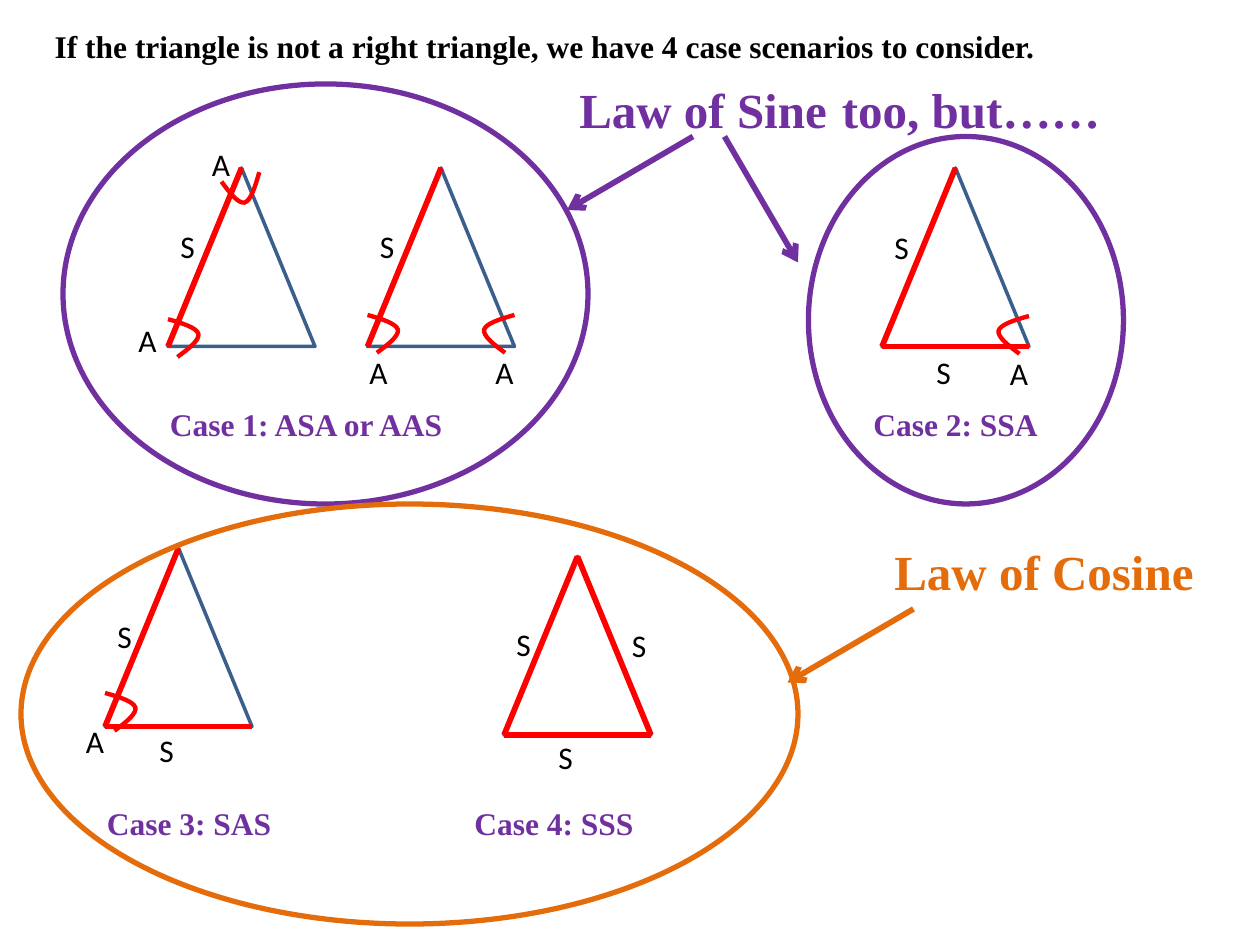
"""Build the slide that sorts non-right triangles into the laws of sine and cosine."""
from lxml.etree import SubElement
from pptx import Presentation
from pptx.dml.color import RGBColor
from pptx.enum.shapes import MSO_CONNECTOR as Connector, MSO_SHAPE as Shape
from pptx.enum.text import MSO_ANCHOR as Anchor, PP_ALIGN as Align
from pptx.oxml.ns import qn
from pptx.util import Inches, Pt

COLORS = {"black": "000000", "side": "3A5F8C", "known": "FF0000",
          "sine": "7030A0", "cosine": "E46C0A"}
FRAME = {"word_wrap": True, "vertical_anchor": Anchor.TOP}
LETTER = {"name": "Calibri", "size": Pt(18), "bold": False}
CAPTION = {"name": "Times New Roman", "size": Pt(18), "bold": True}
LAW = CAPTION | {"size": Pt(28)}

deck = Presentation()
deck.slide_width, deck.slide_height = Inches(10), Inches(7.5)
CELL = deck.slide_width / 120
slide = deck.slides.add_slide(deck.slide_layouts[5])
shapes = slide.shapes


def write(box, place, text, font, color):
    box.left, box.top, box.width, box.height = (round(n * CELL) for n in place)
    frame = box.text_frame
    for key, value in FRAME.items():
        setattr(frame, key, value)
    paragraph = frame.paragraphs[0]
    paragraph.alignment = Align.LEFT
    run = paragraph.add_run()
    run.text = text
    for key, value in font.items():
        setattr(run.font, key, value)
    run.font.color.rgb = RGBColor.from_string(COLORS[color])


def outline(item, color, points, arrow=False):
    if hasattr(item, "fill"):
        item.fill.background()
    item.line.color.rgb = RGBColor.from_string(COLORS[color])
    item.line.width = Pt(points)
    properties = item._element.spPr
    if arrow:
        SubElement(properties.find(qn("a:ln")), qn("a:tailEnd"), type="arrow")
    SubElement(properties, qn("a:effectLst"))


write(shapes.title, (4, 2, 114, 4.8),
      "If the triangle is not a right triangle, we have 4 case scenarios to consider.",
      CAPTION, "black")

BASE, HEIGHT = 14, 17
CORNERS = {"left": (0, HEIGHT), "top": (BASE / 2, 0), "right": (BASE, HEIGHT)}
triangles = [
    (16, 16, ["left top"]),
    (35, 16, ["left top"]),
    (84, 16, ["left top", "left right"]),
    (10, 52.2, ["left top", "left right"]),
    (48, 53, ["left top", "left right", "top right"]),
]
for column, row, known_sides in triangles:
    triangle = shapes.add_shape(Shape.ISOSCELES_TRIANGLE, *(
        round(n * CELL) for n in (column, row, BASE, HEIGHT)))
    outline(triangle, "side", 2)
    for side in known_sides:
        ends = [round(n * CELL) for corner in side.split()
                for n in (column + CORNERS[corner][0], row + CORNERS[corner][1])]
        outline(shapes.add_connector(Connector.STRAIGHT, *ends), "known", 3.25)

ARC = [(0, 0), (1.4, 0.4), (2.7, 0.8), (2.9, 1.4), (3, 2), (2, 2.8), (0.9, 3.6)]
TURNS = {
    "left": lambda u, v: (u, v),
    "right": lambda u, v: (-u, v),
    "top": lambda u, v: (-v, u),
}
angles = [
    (24.7, 16.4, "top"), (16, 30.4, "left"), (35, 30, "left"),
    (49, 30, "right"), (98, 30.1, "right"), (10, 66, "left"),
]
for column, row, corner in angles:
    turned = [TURNS[corner](u, v) for u, v in ARC]
    start, *controls = [(round((column + x) * CELL), round((row + y) * CELL))
                        for x, y in turned]
    builder = shapes.build_freeform(*start)
    builder.add_line_segments(controls, close=False)
    angle = builder.convert_to_shape()
    segments = list(angle._element.iter(qn("a:lnTo")))
    curve_path = segments[0].getparent()
    for first in range(0, len(segments), 3):
        curve = SubElement(curve_path, qn("a:cubicBezTo"))
        for segment in segments[first:first + 3]:
            curve.append(segment[0])
            curve_path.remove(segment)
    outline(angle, "known", 2.5)

groups = [(6, 8, 50, 40, "sine"), (77, 13, 30, 35, "sine"), (2, 48, 74, 40, "cosine")]
for *place, law in groups:
    outline(shapes.add_shape(Shape.OVAL, *(round(n * CELL) for n in place)), law, 3)

arrows = [(66, 13, 54, 20, "sine"), (69, 13, 76, 25, "sine"), (87, 58, 75, 65, "cosine")]
for *ends, law in arrows:
    pointer = shapes.add_connector(Connector.STRAIGHT, *(round(n * CELL) for n in ends))
    outline(pointer, law, 3.25, arrow=True)

letters = {
    "S": [(16, 21), (35, 21), (84, 21.1), (88, 33), (10, 58.2), (14, 69),
          (48, 58.9), (52, 69.7), (59, 59)],
    "A": [(12, 30), (19, 13.2), (34, 33), (46, 33), (95, 33.1), (7, 68.2)],
}
captions = [
    (15, 38, "Case 1: ASA or AAS"), (82, 38, "Case 2: SSA"),
    (9, 76, "Case 3: SAS"), (44, 76, "Case 4: SSS"),
]
laws = [
    (54, 7, 30, "Law of Sine", "sine"), (79, 7, 33, "too, but……", "sine"),
    (84, 51, 34, "Law of Cosine", "cosine"),
]
labels = [((*spot, 4, 4.8), letter, LETTER, "black")
          for letter, spots in letters.items() for spot in spots]
labels += [((column, row, 29, 4.8), text, CAPTION, "sine") for column, row, text in captions]
labels += [((column, row, width, 6.9), text, LAW, law)
           for column, row, width, text, law in laws]
for label in labels:
    write(shapes.add_textbox(0, 0, 0, 0), *label)

deck.save("out.pptx")
